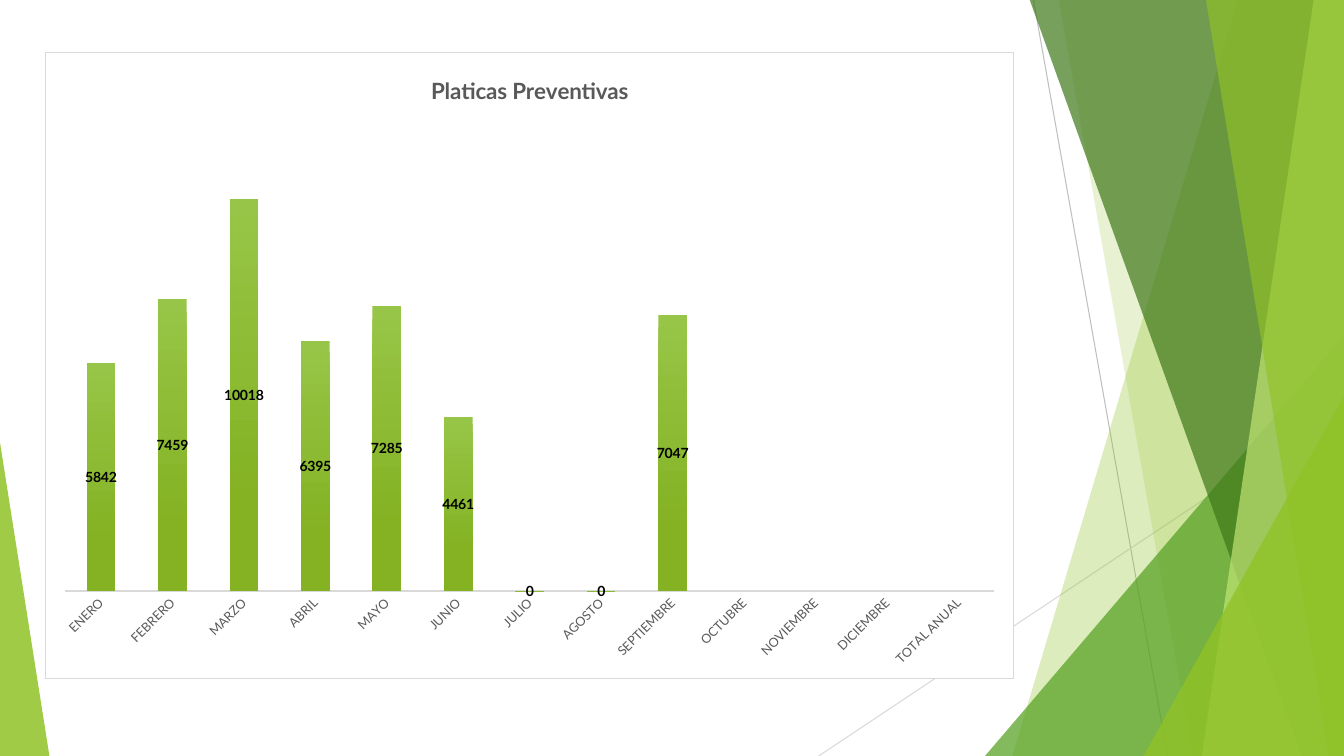
import dataclasses
import typing

import pptx
import pptx.chart.data
import pptx.dml.color
import pptx.enum.chart
import pptx.enum.shapes
import pptx.oxml
import pptx.oxml.ns
import pptx.util

Inches = pptx.util.Inches
RGBColor = pptx.dml.color.RGBColor

WHITE = RGBColor(0xFF, 0xFF, 0xFF)
BLACK = RGBColor(0, 0, 0)
TEXT_GREY = RGBColor(0x59, 0x59, 0x59)
MID_GREY = RGBColor(0xBF, 0xBF, 0xBF)
LIGHT_GREY = RGBColor(0xD9, 0xD9, 0xD9)
LIME = RGBColor(0x90, 0xC2, 0x26)
GREEN = RGBColor(0x54, 0xA0, 0x21)
DARK_GREEN = RGBColor(0x3F, 0x78, 0x19)
PALE_LIME = RGBColor(0xC0, 0xE4, 0x74)
BAR_TOP = RGBColor(0x97, 0xC5, 0x47)
BAR_BOTTOM = RGBColor(0x84, 0xB2, 0x23)

FONT = "Lato"
WIDTH, HEIGHT = 13.33, 7.5
BAND_TOP = -0.01
DRAWING = 'xmlns:a="http://schemas.openxmlformats.org/drawingml/2006/main"'
CHART = 'xmlns:c="http://schemas.openxmlformats.org/drawingml/2006/chart"'


@dataclasses.dataclass
class Ray:
    start: tuple[float, float]
    end: tuple[float, float]
    color: RGBColor


@dataclasses.dataclass
class Band:
    top_left: float
    bottom_left: float
    color: RGBColor
    opacity: int


@dataclasses.dataclass
class Wedge:
    left: float
    top: float
    width: float
    apex: float
    color: RGBColor
    opacity: int


RAYS = [
    Ray((10.25, 0), (11.58, HEIGHT), MID_GREY),
    Ray((WIDTH, 4.03), (8.12, HEIGHT), LIGHT_GREY),
]
FACETS = [
    Band(12.28, 10.04, LIME, 30),
    Band(10.5, 11.83, LIME, 20),
    Wedge(9.77, 3.33, 3.56, 1, GREEN, 72),
    Band(10.21, 12.91, DARK_GREEN, 70),
    Band(13.03, 11.92, PALE_LIME, 70),
    Band(11.96, 13.18, LIME, 65),
    Wedge(11.34, 3.93, 1.99, 1, LIME, 80),
    Wedge(0, 4.39, 0.49, 0, LIME, 85),
]
TALKS = {
    "ENERO": 5842, "FEBRERO": 7459, "MARZO": 10018, "ABRIL": 6395,
    "MAYO": 7285, "JUNIO": 4461, "JULIO": 0, "AGOSTO": 0,
    "SEPTIEMBRE": 7047, "OCTUBRE": None, "NOVIEMBRE": None,
    "DICIEMBRE": None, "TOTAL ANUAL": None,
}


def draw_ray(page: typing.Any, ray: Ray) -> None:
    line = page.shapes.add_connector(
        pptx.enum.shapes.MSO_CONNECTOR.STRAIGHT,
        *map(Inches, ray.start + ray.end),
    )
    line.line.color.rgb = ray.color
    line.line.width = pptx.util.Pt(0.75)
    properties = line.element.find(pptx.oxml.ns.qn("p:spPr"))
    properties.append(pptx.oxml.parse_xml(f"<a:effectLst {DRAWING}/>"))


def draw_facet(page: typing.Any, facet: Band | Wedge) -> None:
    if isinstance(facet, Band):
        builder = page.shapes.build_freeform(Inches(facet.top_left), Inches(BAND_TOP))
        corners = [(WIDTH, BAND_TOP), (WIDTH, HEIGHT), (facet.bottom_left, HEIGHT)]
        builder.add_line_segments([(Inches(x), Inches(y)) for x, y in corners], close=True)
        shape = builder.convert_to_shape()
    else:
        shape = page.shapes.add_shape(
            pptx.enum.shapes.MSO_SHAPE.ISOSCELES_TRIANGLE,
            Inches(facet.left), Inches(facet.top),
            Inches(facet.width), Inches(HEIGHT - facet.top),
        )
        shape.adjustments[0] = facet.apex
    shape.shadow.inherit = False
    shape.line.fill.background()
    shape.fill.solid()
    shape.fill.fore_color.rgb = facet.color
    color = shape.element.find(".//" + pptx.oxml.ns.qn("a:srgbClr"))
    color.append(pptx.oxml.parse_xml(f'<a:alpha {DRAWING} val="{facet.opacity * 1000}"/>'))


def format_font(font: typing.Any, *, size: float, color: RGBColor, bold: bool = False) -> None:
    font.name = FONT
    font.size = pptx.util.Pt(size)
    font.color.rgb = color
    font.bold = bold


def write_text(frame: typing.Any, text: str, *, size: float, color: RGBColor, bold: bool) -> None:
    span = frame.paragraphs[0].add_run()
    span.text = text
    format_font(span.font, size=size, color=color, bold=bold)


def frame_chart(chart: typing.Any) -> None:
    qn = pptx.oxml.ns.qn
    chart.element.find(qn("c:chart")).addnext(pptx.oxml.parse_xml(
        f'<c:spPr {CHART} {DRAWING}><a:solidFill><a:srgbClr val="{WHITE}"/></a:solidFill>'
        f'<a:ln w="9525"><a:solidFill><a:srgbClr val="{LIGHT_GREY}"/></a:solidFill></a:ln></c:spPr>'
    ))
    area = chart.element.find(".//" + qn("c:plotArea"))
    for layout in area.findall(qn("c:layout")):
        area.remove(layout)
    area.insert(0, pptx.oxml.parse_xml(
        f'<c:layout {CHART}><c:manualLayout><c:layoutTarget val="inner"/>'
        '<c:xMode val="edge"/><c:yMode val="edge"/><c:x val="0.02"/><c:y val="0.11"/>'
        '<c:w val="0.96"/><c:h val="0.75"/></c:manualLayout></c:layout>'
    ))
    chart.element.xpath(".//c:catAx/c:txPr/a:bodyPr")[0].set("rot", "-2700000")


def draw_chart(page: typing.Any) -> None:
    data = pptx.chart.data.CategoryChartData()
    data.categories = list(TALKS)
    data.add_series("Series 1", list(TALKS.values()))
    chart = page.shapes.add_chart(
        pptx.enum.chart.XL_CHART_TYPE.COLUMN_STACKED,
        Inches(0.45), Inches(0.52), Inches(9.61), Inches(6.22), data,
    ).chart
    format_font(chart.font, size=10, color=BLACK)
    chart.has_legend = False
    chart.has_title = True
    write_text(chart.chart_title.text_frame, "Platicas Preventivas",
               size=16, color=TEXT_GREY, bold=True)
    chart.chart_title.include_in_layout = False

    values = chart.value_axis
    values.minimum_scale, values.maximum_scale = 0, 12000
    values.has_major_gridlines = False
    values.visible = False
    months = chart.category_axis
    months.major_tick_mark = pptx.enum.chart.XL_TICK_MARK.NONE
    months.format.line.color.rgb = LIGHT_GREY
    months.format.line.width = pptx.util.Pt(1)
    format_font(months.tick_labels.font, size=9, color=TEXT_GREY)

    plot = chart.plots[0]
    plot.gap_width, plot.overlap = 150, 100
    plot.vary_by_categories = False
    series = plot.series[0]
    fill = series.format.fill
    fill.gradient()
    fill.gradient_angle = 270
    for stop, position, color in zip(fill.gradient_stops, (0, 0.78), (BAR_TOP, BAR_BOTTOM)):
        stop.position = position
        stop.color.rgb = color
    labels = series.data_labels
    labels.show_value = True
    labels.position = pptx.enum.chart.XL_LABEL_POSITION.CENTER
    format_font(labels.font, size=10, color=BLACK, bold=True)
    frame_chart(chart)


def main() -> None:
    deck = pptx.Presentation()
    deck.slide_width, deck.slide_height = Inches(WIDTH), Inches(HEIGHT)
    page = deck.slides.add_slide(deck.slide_layouts[6])
    for ray in RAYS:
        draw_ray(page, ray)
    for facet in FACETS:
        draw_facet(page, facet)
    draw_chart(page)
    deck.save("out.pptx")


if __name__ == "__main__":
    main()
